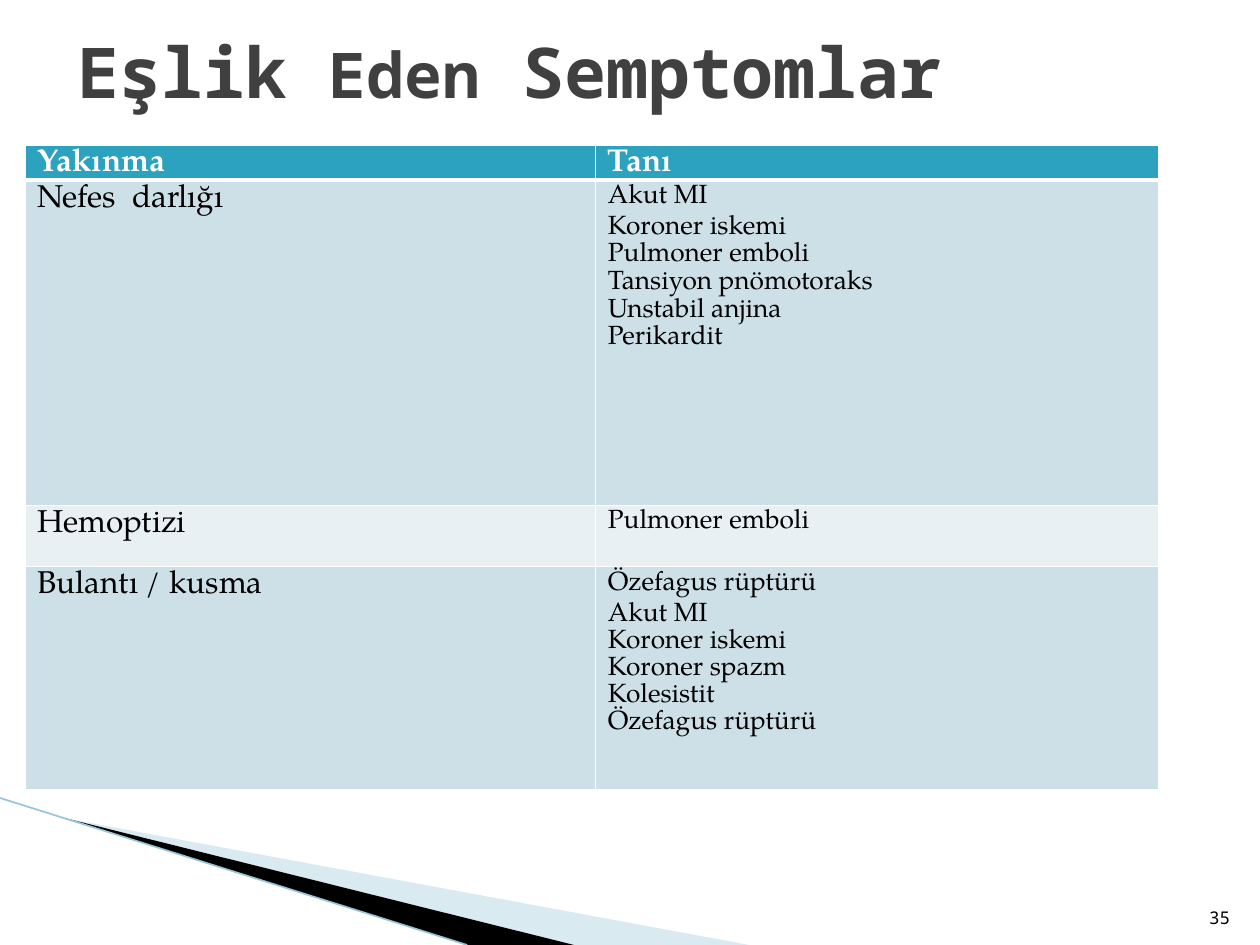
from lxml.etree import SubElement
from pptx import Presentation
from pptx.dml.color import RGBColor
from pptx.enum.shapes import MSO_CONNECTOR
from pptx.enum.text import MSO_ANCHOR as Anchor, PP_ALIGN as Align
from pptx.oxml.ns import qn
from pptx.util import Pt

SERIF, MONO = "TeX Gyre Pagella", "Noto Sans Mono"
HEADER = ("Yakınma", "Tanı")
# Complaint, diagnoses, row height, row fill, gaps before the 2nd and later lines, line spacing
COMPLAINTS = [
    ("Nefes  darlığı",
     ["Akut MI", "Koroner iskemi", "Pulmoner emboli", "Tansiyon pnömotoraks",
      "Unstabil anjina", "Perikardit"], 186, "CDE0E8", (2.2, 0.4), 1.02),
    ("Hemoptizi", ["Pulmoner emboli"], 35, "E8F0F4", (0, 0), 1),
    ("Bulantı / kusma",
     ["Özefagus rüptürü", "Akut MI", "Koroner iskemi", "Koroner spazm",
      "Kolesistit", "Özefagus rüptürü"], 127.5, "CDE0E8", (2.4, 0.1), 1.02),
]


def color(hex_string):
    return RGBColor.from_string(hex_string)


def set_font(font, name, size, hex_string, bold=False):
    font.name, font.size, font.bold = name, Pt(size), bold
    font.color.rgb = color(hex_string)


def add_wedge(page, points, fill, opacity=100):
    builder = page.shapes.build_freeform(Pt(points[0][0]), Pt(points[0][1]))
    builder.add_line_segments([(Pt(x), Pt(y)) for x, y in points[1:]], close=True)
    wedge = builder.convert_to_shape()
    wedge.shadow.inherit = False
    wedge.line.fill.background()
    wedge.fill.solid()
    wedge.fill.fore_color.rgb = color(fill)
    if opacity < 100:
        tint = wedge.fill._xPr.find(".//" + qn("a:srgbClr"))
        SubElement(tint, qn("a:alpha"), val=str(opacity * 1000))


def add_corner(page, left, top, width, height):
    """Draw the swoosh that runs from the left edge to the bottom edge."""
    right, bottom = left + width, top + height
    start = (left + 39, top + 12)
    add_wedge(page, [start, (right, bottom), (left + 328, bottom)], "A0CBDC", 40)
    add_wedge(page, [start, (left + 328, bottom), (left + 267, bottom)], "000000")
    edge = page.shapes.add_connector(
        MSO_CONNECTOR.STRAIGHT, Pt(left), Pt(top), Pt(left + 267), Pt(bottom))
    edge.line.color.rgb = color("97C5D8")
    edge.line.width = Pt(0.95)
    SubElement(edge._element.spPr, qn("a:effectLst"))


def set_borders(cell, bottom):
    props = cell._tc.get_or_add_tcPr()
    for index, (side, width) in enumerate(
            [("L", 1), ("R", 1), ("T", 1), ("B", bottom)]):
        border = SubElement(props, qn("a:ln" + side), w=str(Pt(width)))
        paint = SubElement(border, qn("a:solidFill"))
        SubElement(paint, qn("a:srgbClr"), val="FFFFFF")
        props.remove(border)
        props.insert(index, border)


def fill_cell(cell, lines, fill, size, ink="000000", bold=False,
              gaps=(0, 0), spacing=1, bottom=1):
    cell.fill.solid()
    cell.fill.fore_color.rgb = color(fill)
    cell.margin_left, cell.margin_right = Pt(7), 0
    cell.margin_top, cell.margin_bottom = Pt(2.2), 0
    frame = cell.text_frame
    for index, line in enumerate(lines):
        para = frame.add_paragraph() if index else frame.paragraphs[0]
        para.text = line
        para.line_spacing = spacing
        if index:
            para.space_before = Pt(gaps[0] if index == 1 else gaps[1])
        set_font(para.font, SERIF, size, ink, bold)
    set_borders(cell, bottom)


def add_symptom_table(page, left, top, width, height):
    table = page.shapes.add_table(
        len(COMPLAINTS) + 1, 2, Pt(left), Pt(top), Pt(width), Pt(height)).table
    table.columns[0].width = Pt(326)
    table.columns[1].width = Pt(width - 326)
    table.rows[0].height = Pt(height - sum(row[2] for row in COMPLAINTS))
    for column, label in enumerate(HEADER):
        fill_cell(table.cell(0, column), [label], "2DA2BF", 18, "FFFFFF", True, bottom=3)
    for row, (complaint, diagnoses, tall, fill, gaps, spacing) in enumerate(COMPLAINTS, 1):
        table.rows[row].height = Pt(tall)
        fill_cell(table.cell(row, 0), [complaint], fill, 18, spacing=spacing)
        fill_cell(table.cell(row, 1), diagnoses, fill, 15, gaps=gaps, spacing=spacing)


def add_text(page, left, top, width, height, spans, ink, bold, anchor, align):
    """Add one line of text made of (text, size) spans."""
    box = page.shapes.add_textbox(Pt(left), Pt(top), Pt(width), Pt(height))
    frame = box.text_frame
    frame.word_wrap = False
    frame.vertical_anchor = anchor
    para = frame.paragraphs[0]
    para.alignment = align
    for text, size in spans:
        span = para.add_run()
        span.text = text
        set_font(span.font, MONO, size, ink, bold)


def main():
    deck = Presentation()
    deck.slide_width, deck.slide_height = Pt(720), Pt(540)
    page = deck.slides.add_slide(deck.slide_layouts[6])
    add_corner(page, 0, 456, 428, 84)
    add_symptom_table(page, 14.4, 83, 648, 368)
    add_text(page, 681, 505, 29, 29, [("35", 10)], "000000", False,
             Anchor.BOTTOM, Align.RIGHT)
    add_text(page, 37, 15, 527, 51, [("Eşlik ", 40), ("Eden", 36), (" Semptomlar", 40)],
             "404040", True, Anchor.MIDDLE, Align.LEFT)
    deck.save("out.pptx")


if __name__ == "__main__":
    main()
